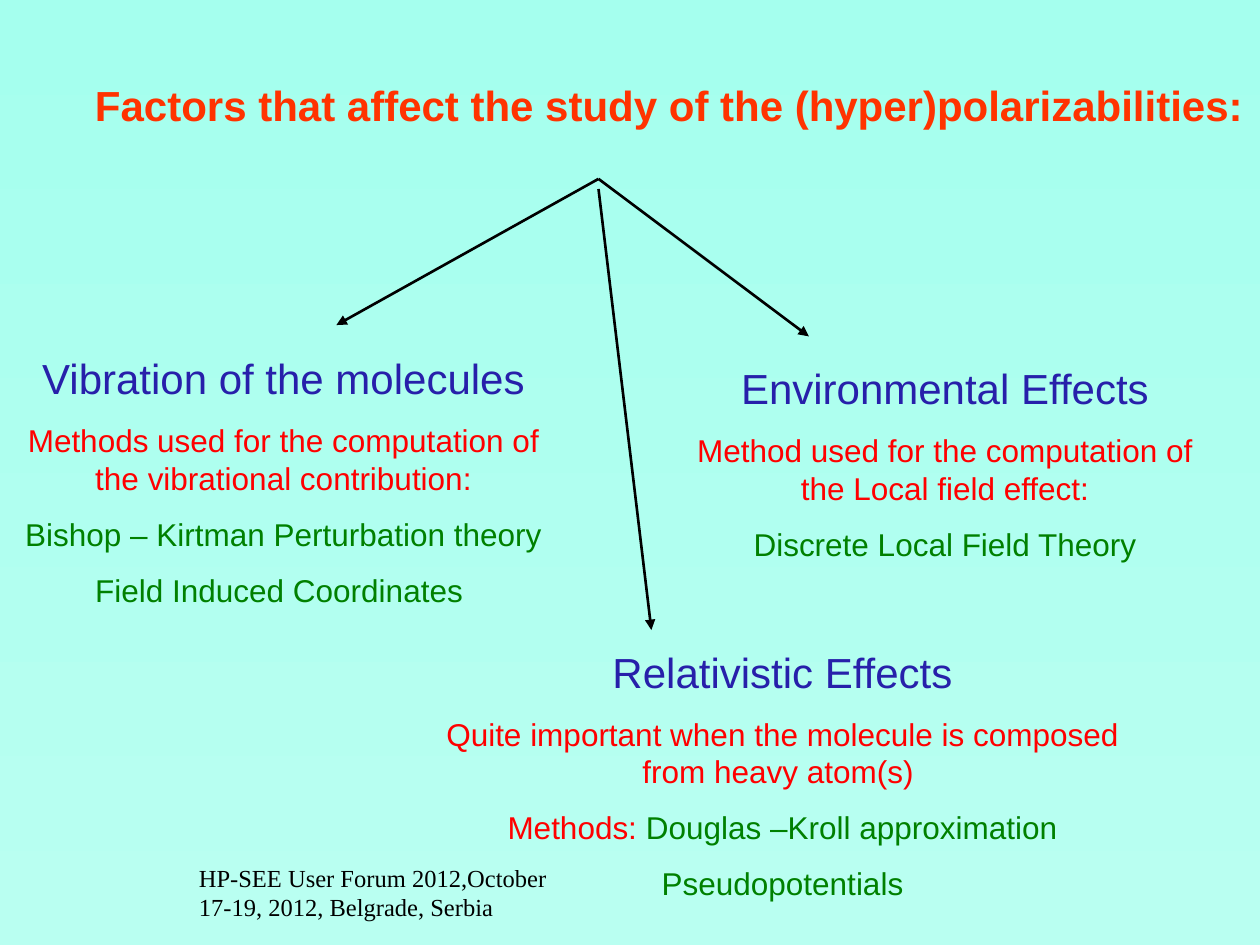
from lxml.etree import SubElement
from pptx import Presentation
from pptx.dml.color import RGBColor
from pptx.enum.shapes import MSO_CONNECTOR
from pptx.enum.text import MSO_ANCHOR, MSO_AUTO_SIZE, PP_ALIGN
from pptx.oxml.ns import qn
from pptx.util import Inches, Pt

COLORS = {
    "top": "A5FFEE", "base": "B9FFF1", "title": "FF3300", "head": "2720AA",
    "note": "FF0000", "method": "008000", "ink": "000000",
}


def color(name):
    return RGBColor.from_string(COLORS[name])


def place(shape, left, top, width, height):
    shape.left, shape.top = Inches(left), Inches(top)
    shape.width, shape.height = Inches(width), Inches(height)


def add_run(para, text, size=18, fill="ink", font="Arial", bold=False):
    run = para.add_run()
    run.text = text
    run.font.name, run.font.size, run.font.bold = font, Pt(size), bold
    run.font.color.rgb = color(fill)


def set_back(slide):
    fill = slide.background.fill
    fill.gradient()
    fill.gradient_angle = 270  # top to bottom
    for stop, name in zip(fill.gradient_stops, ("top", "base")):
        stop.color.rgb = color(name)
    for stop, spot in zip(fill.gradient_stops, (0, 1)):
        stop.position = spot


def set_title(slide, text):
    title = slide.shapes.title
    place(title, 0.08, 0.58, 9.92, 0.5)
    frame = title.text_frame
    frame.word_wrap = True
    frame.auto_size = MSO_AUTO_SIZE.NONE
    frame.vertical_anchor = MSO_ANCHOR.TOP
    frame.margin_left = Inches(0.64)
    para = frame.paragraphs[0]
    para.alignment = PP_ALIGN.CENTER
    add_run(para, text, size=24, fill="title", bold=True)


def add_text(slide, box, rows, align=PP_ALIGN.CENTER):
    """Each row is a list of (text, format) runs."""
    frame = slide.shapes.add_textbox(*map(Inches, box)).text_frame
    frame.word_wrap = True
    for i, row in enumerate(rows):
        para = frame.add_paragraph() if i else frame.paragraphs[0]
        para.alignment = align
        para.space_before = Pt(10.3 if i else 0)
        for text, form in row:
            add_run(para, text, **form)


def add_arrow(slide, start, end):
    line = slide.shapes.add_connector(
        MSO_CONNECTOR.STRAIGHT, *map(Inches, start + end))
    line.line.color.rgb = color("ink")
    line.line.width = Pt(1.5)
    SubElement(line.line._get_or_add_ln(), qn("a:tailEnd"), type="triangle")
    SubElement(line._element.spPr, qn("a:effectLst"))


def main():
    deck = Presentation()
    deck.slide_width, deck.slide_height = Inches(10), Inches(7.5)
    slide = deck.slides.add_slide(deck.slide_layouts[5])
    set_back(slide)
    set_title(slide, "Factors that affect the study of the "
                     "(hyper)polarizabilities:")

    # Arrows from the title to each factor
    for start, end in (
        ((4.75, 1.42), (2.67, 2.58)),
        ((4.75, 1.42), (6.42, 2.67)),
        ((4.75, 1.5), (5.17, 5)),
    ):
        add_arrow(slide, start, end)

    # Factors with their methods
    head = {"size": 24, "fill": "head"}
    note, method = {"fill": "note"}, {"fill": "method"}
    add_text(slide, (0, 2.75, 4.5, 2.15), [
        [("Vibration of the molecules", head)],
        [("Methods used for the computation of the vibrational "
          "contribution:", note)],
        [("Bishop – Kirtman Perturbation theory", method)],
        [("Field Induced Coordinates ", method)],
    ])
    add_text(slide, (5.25, 2.83, 4.5, 1.7), [
        [("Environmental Effects", head)],
        [("Method used for the computation of the Local field effect:", note)],
        [("Discrete Local Field Theory", method)],
    ])
    add_text(slide, (3.25, 5.08, 5.92, 2.15), [
        [("Relativistic Effects", head)],
        [("Quite important when the molecule is composed from heavy "
          "atom(s) ", note)],
        [("Methods:", note), (" Douglas –Kroll approximation", method)],
        [("Pseudopotentials", method)],
    ])

    # Footer
    add_text(slide, (1.48, 6.8, 3.17, 0.5), [
        [("HP-SEE User Forum 2012,October 17-19, 2012, Belgrade, Serbia",
          {"size": 14, "font": "Times New Roman"})],
    ], align=PP_ALIGN.LEFT)
    deck.save("out.pptx")


if __name__ == "__main__":
    main()
